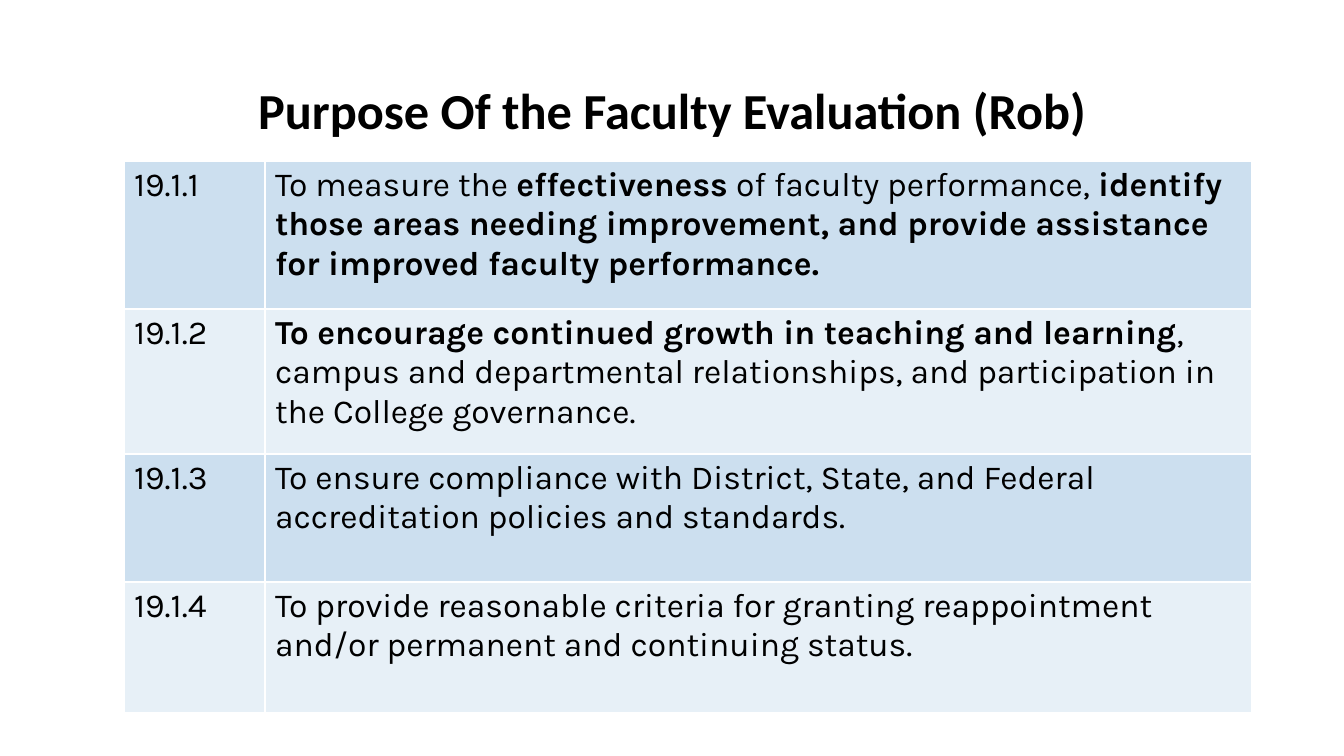
from lxml.etree import SubElement
from pptx import Presentation
from pptx.dml.color import RGBColor
from pptx.enum.text import MSO_ANCHOR as Anchor, PP_ALIGN as Align
from pptx.oxml.ns import qn
from pptx.util import Pt

TITLE = "Purpose Of the Faculty Evaluation (Rob)"
PURPOSES = [
    ("19.1.1", [
        ("To measure the ", False),
        ("effectiveness", True),
        (" of faculty performance, ", False),
        ("identify those areas needing improvement, and provide assistance "
         "for improved faculty performance.", True),
    ]),
    ("19.1.2", [
        ("To encourage continued growth in teaching and learning", True),
        (", campus and departmental relationships, and participation in "
         "the College governance.", False),
    ]),
    ("19.1.3", [
        ("To ensure compliance with District, State, and Federal "
         "accreditation policies and standards.", False),
    ]),
    ("19.1.4", [
        ("To provide reasonable criteria for granting reappointment "
         "and/or permanent and continuing status.", False),
    ]),
]
SLIDE_SIZE = (1344, 756)
TITLE_BOX = (93, 40, 1159, 146)
TABLE_ORIGIN = (124, 161)
COLUMN_WIDTHS = (141, 987)
ROW_HEIGHTS = (148, 145, 128, 131)
BAND_FILLS = ("CCDFEF", "E7F0F7")
BLACK, WHITE = "000000", "FFFFFF"


def px(length):
    return round(length * 914400 / 100.8)


def color(value):
    return RGBColor.from_string(value)


def style_font(font, name, size):
    font.name = name
    font.size = Pt(size)
    font.color.rgb = color(BLACK)


def add_borders(cell):
    properties = cell._tc.get_or_add_tcPr()
    for side in ("a:lnL", "a:lnR", "a:lnT", "a:lnB"):
        line = SubElement(properties, qn(side), w=str(Pt(1)))
        fill = SubElement(line, qn("a:solidFill"))
        SubElement(fill, qn("a:srgbClr"), val=WHITE)


def fill_cell(cell, runs, fill, space_after):
    add_borders(cell)
    cell.fill.solid()
    cell.fill.fore_color.rgb = color(fill)
    paragraph = cell.text_frame.paragraphs[0]
    paragraph.space_after = Pt(space_after)
    style_font(paragraph.font, "Karla", 24)
    for text, bold in runs:
        run = paragraph.add_run()
        run.text = text
        run.font.bold = bold


def add_title(slide):
    title = slide.shapes.title
    title.left, title.top, title.width, title.height = map(px, TITLE_BOX)
    title.text_frame.text = TITLE
    title.text_frame.word_wrap = True
    title.text_frame.vertical_anchor = Anchor.MIDDLE
    paragraph = title.text_frame.paragraphs[0]
    paragraph.alignment = Align.CENTER
    paragraph.line_spacing = 0.9
    style_font(paragraph.font, "Calibri", 36)
    paragraph.font.bold = True


def add_purposes(slide):
    size = (sum(COLUMN_WIDTHS), sum(ROW_HEIGHTS))
    table = slide.shapes.add_table(
        len(PURPOSES), len(COLUMN_WIDTHS), *map(px, TABLE_ORIGIN + size)).table
    table.first_row = table.horz_banding = False
    for column, width in zip(table.columns, COLUMN_WIDTHS):
        column.width = px(width)
    for index, (number, runs) in enumerate(PURPOSES):
        table.rows[index].height = px(ROW_HEIGHTS[index])
        fill = BAND_FILLS[index % 2]
        fill_cell(table.cell(index, 0), [(number, False)], fill, 0)
        fill_cell(table.cell(index, 1), runs, fill, 12)


def main():
    presentation = Presentation()
    presentation.slide_width, presentation.slide_height = map(px, SLIDE_SIZE)
    slide = presentation.slides.add_slide(presentation.slide_layouts[5])
    add_title(slide)
    add_purposes(slide)
    presentation.save("out.pptx")


if __name__ == "__main__":
    main()
